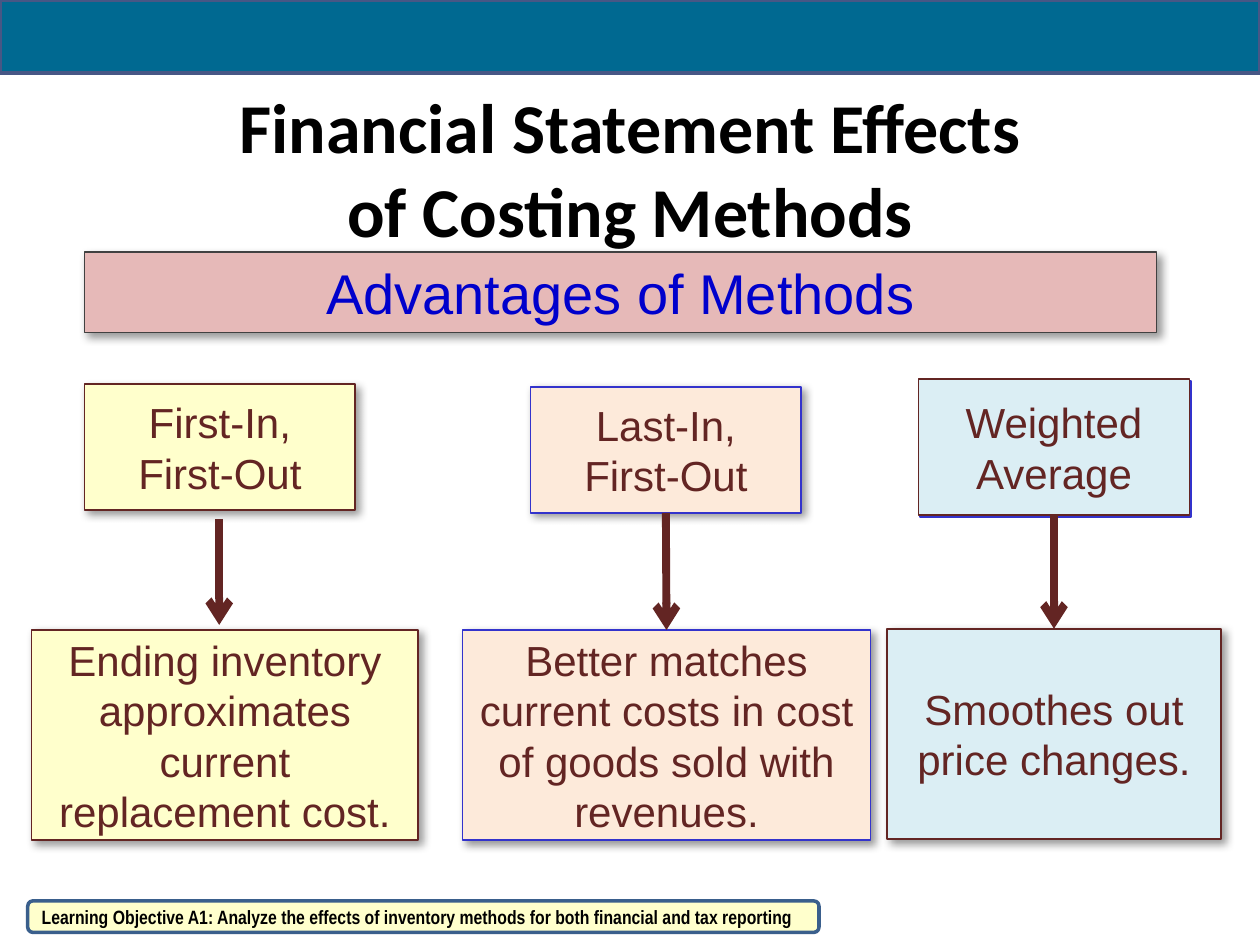
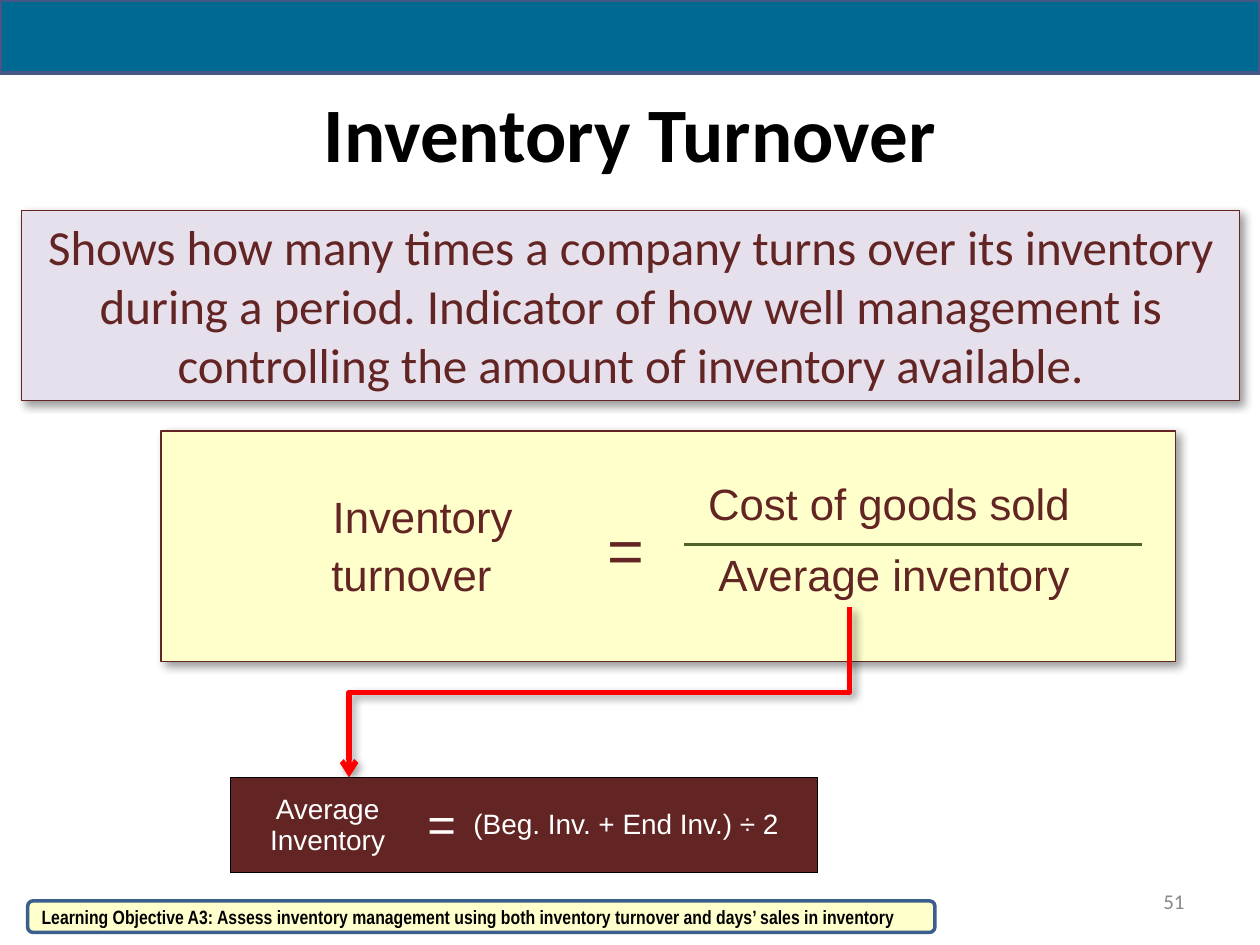
from lxml import etree
from pptx import Presentation
from pptx.dml.color import RGBColor
from pptx.enum.shapes import MSO_CONNECTOR, MSO_SHAPE
from pptx.enum.text import MSO_ANCHOR, PP_ALIGN
from pptx.oxml import parse_xml
from pptx.oxml.ns import nsdecls, qn
from pptx.util import Pt

PX = 9144
RECTANGLE, ROUNDED = MSO_SHAPE.RECTANGLE, MSO_SHAPE.ROUNDED_RECTANGLE
STRAIGHT, ELBOW = MSO_CONNECTOR.STRAIGHT, MSO_CONNECTOR.ELBOW
TOP, MIDDLE = MSO_ANCHOR.TOP, MSO_ANCHOR.MIDDLE
LEFT, CENTER, RIGHT = PP_ALIGN.LEFT, PP_ALIGN.CENTER, PP_ALIGN.RIGHT
BOTTOM_SITE, TOP_SITE = 2, 0

BLACK = RGBColor(0x00, 0x00, 0x00)
WHITE = RGBColor(0xFF, 0xFF, 0xFF)
GRAY = RGBColor(0x89, 0x89, 0x89)
CHARCOAL = RGBColor(0x41, 0x41, 0x41)
MAROON = RGBColor(0x63, 0x25, 0x23)
ROSE = RGBColor(0xE6, 0xB9, 0xB8)
YELLOW = RGBColor(0xFF, 0xFF, 0xCC)
PEACH = RGBColor(0xFD, 0xEA, 0xDA)
ICE = RGBColor(0xDB, 0xEE, 0xF4)
LAVENDER = RGBColor(0xE6, 0xE0, 0xEC)
INDIGO = RGBColor(0x33, 0x33, 0xCC)
BLUE = RGBColor(0x00, 0x00, 0xCC)
TEAL = RGBColor(0x00, 0x69, 0x91)
BAND_EDGE = RGBColor(0x47, 0x57, 0x85)
FOOTER_EDGE = RGBColor(0x3A, 0x5F, 0x8C)
GREEN = RGBColor(0x4F, 0x62, 0x28)
RED = RGBColor(0xFF, 0x00, 0x00)

TITLE_BIG = {"name": "Calibri", "size": Pt(44), "bold": True}
TITLE_SMALL = {"name": "Calibri", "size": Pt(40), "bold": True}
HEADING = {"name": "Arial", "size": Pt(32)}
METHOD = {"name": "Arial", "size": Pt(24)}
FORMULA = {"name": "Arial", "size": Pt(25)}
EQUALS = {"name": "Arial", "size": Pt(36)}
SUMMARY = {"name": "Calibri", "size": Pt(28)}
CELL = {"name": "Arial", "size": Pt(16)}
CELL_EQUALS = {"name": "Arial", "size": Pt(28)}
FOOTER = {"name": "Arial Narrow", "size": Pt(11), "bold": True}
NUMBER = {"name": "Calibri", "size": Pt(12)}

SHADOW = (
    f'<a:outerShdw {nsdecls("a")} blurRad="%d" dist="%d" dir="2700000" algn="tl" rotWithShape="0">'
    '<a:srgbClr val="%s"><a:alpha val="%d"/></a:srgbClr></a:outerShdw>'
)
SOFT = (63500, 38100, BLACK, 40000)
HARD = (0, 17780, INDIGO, 100000)


def write_text(frame, text, style, color, align):
    frame.word_wrap = True
    paragraph = frame.paragraphs[0]
    paragraph.text = text
    paragraph.alignment = align
    for run in paragraph.runs:
        for attribute, value in style.items():
            setattr(run.font, attribute, value)
        run.font.color.rgb = color


def add_box(slide, bounds, fill, edge=None, width=1, shadow=None, kind=RECTANGLE):
    shape = slide.shapes.add_shape(kind, *(value * PX for value in bounds))
    shape.fill.solid()
    shape.fill.fore_color.rgb = fill
    if edge is None:
        shape.line.fill.background()
    else:
        shape.line.color.rgb = edge
        shape.line.width = Pt(width)
    shape.shadow.inherit = False
    if shadow:
        effects = shape._element.spPr.find(qn("a:effectLst"))
        effects.append(parse_xml(SHADOW % shadow))
    return shape


presentation = Presentation()
presentation.slide_width = 1000 * PX
presentation.slide_height = 750 * PX

pages = [
    ("Financial Statement Effects\vof Costing Methods", TITLE_SMALL, (50, 83, 900, 100),
     "Learning Objective A1: Analyze the effects of inventory methods for both financial and tax reporting", 628),
    ("Inventory Turnover", TITLE_BIG, (50, 42, 900, 125),
     "Learning Objective A3: Assess inventory management using both inventory turnover and days’ sales in inventory", 720),
]
slides = []
for title_text, title_style, bounds, objective, footer_width in pages:
    slide = presentation.slides.add_slide(presentation.slide_layouts[5])
    title = slide.shapes.title
    for attribute, value in zip(("left", "top", "width", "height"), bounds):
        setattr(title, attribute, value * PX)
    title.text_frame.vertical_anchor = MIDDLE
    write_text(title.text_frame, title_text, title_style, BLACK, CENTER)
    add_box(slide, (0, 0, 1000, 58), TEAL, BAND_EDGE, 2.25)
    footer = add_box(slide, (22, 715, footer_width, 25), YELLOW, FOOTER_EDGE, 2, kind=ROUNDED)
    write_text(footer.text_frame, objective, FOOTER, BLACK, LEFT)
    slides.append(slide)
methods_slide, turnover_slide = slides

heading = add_box(methods_slide, (67, 200, 851, 64), ROSE, CHARCOAL, shadow=SOFT)
heading.text_frame.vertical_anchor = TOP
write_text(heading.text_frame, "Advantages of Methods", HEADING, BLUE, CENTER)

methods = [
    ("First-In, First-Out", (67, 305, 215, 100), SOFT,
     "Ending inventory approximates current replacement cost.", (25, 500, 307, 167),
     YELLOW, MAROON, (174, 412, 174, 496), False),
    ("Last-In, First-Out", (421, 307, 215, 100), SOFT,
     "Better matches current costs in cost of goods sold with revenues.", (367, 500, 324, 167),
     PEACH, INDIGO, (528, 405, 528, 500), True),
    ("Weighted Average", (729, 301, 215, 108), HARD,
     "Smoothes out price changes.", (704, 499, 265, 167),
     ICE, MAROON, (836, 410, 836, 501), True),
]
arrows = []
for name, name_bounds, name_shadow, benefit, benefit_bounds, fill, edge, ends, joined in methods:
    name_box = add_box(methods_slide, name_bounds, fill, edge, shadow=name_shadow)
    benefit_box = add_box(methods_slide, benefit_bounds, fill, edge, shadow=SOFT)
    for box, text in ((name_box, name), (benefit_box, benefit)):
        box.text_frame.vertical_anchor = MIDDLE
        write_text(box.text_frame, text, METHOD, MAROON, CENTER)
    arrow = methods_slide.shapes.add_connector(STRAIGHT, *(value * PX for value in ends))
    if joined:
        arrow.begin_connect(name_box, BOTTOM_SITE)
        arrow.end_connect(benefit_box, TOP_SITE)
    arrows.append((arrow, MAROON, 4.5, True, None))

add_box(turnover_slide, (128, 342, 805, 183), YELLOW, MAROON, shadow=SOFT)
terms = [
    ("Inventory", (264, 389, 168, 42), FORMULA, LEFT),
    ("turnover", (263, 435, 140, 42), FORMULA, LEFT),
    ("=", (482, 405, 33, 60), EQUALS, LEFT),
    ("Cost of goods sold", (562, 378, 324, 42), FORMULA, LEFT),
    ("Average inventory", (533, 435, 353, 42), FORMULA, CENTER),
]
for text, bounds, style, align in terms:
    term = add_box(turnover_slide, bounds, YELLOW)
    frame = term.text_frame
    frame.vertical_anchor = TOP
    for side in ("left", "top", "right", "bottom"):
        setattr(frame, f"margin_{side}", 0)
    write_text(frame, text, style, MAROON, align)

fraction_bar = turnover_slide.shapes.add_connector(STRAIGHT, 543 * PX, 432 * PX, 906 * PX, 432 * PX)
elbow = turnover_slide.shapes.add_connector(ELBOW, 408 * PX, 351 * PX, 543 * PX, 748 * PX)
elbow._element.spPr.find(qn("a:xfrm")).set("rot", "5400000")

connectors = arrows + [(fraction_bar, GREEN, 1.5, False, None), (elbow, RED, 3, True, SOFT)]
for connector, color, width, has_arrow, shadow in connectors:
    connector.line.color.rgb = color
    connector.line.width = Pt(width)
    properties = connector._element.spPr
    if has_arrow:
        etree.SubElement(properties.find(qn("a:ln")), qn("a:tailEnd"), type="arrow")
    effects = etree.SubElement(properties, qn("a:effectLst"))
    if shadow:
        effects.append(parse_xml(SHADOW % shadow))

summary = add_box(turnover_slide, (17, 167, 967, 151), LAVENDER, MAROON, 0.75, SOFT)
summary.text_frame.vertical_anchor = TOP
write_text(
    summary.text_frame,
    "Shows how many times a company turns over its inventory during a period. "
    "Indicator of how well management is controlling the amount of inventory available.",
    SUMMARY, MAROON, CENTER,
)

columns = [
    (154, "Average Inventory", CELL, 1, ("L", "T", "B")),
    (27, "=", CELL_EQUALS, 1, ("T", "B")),
    (260, "(Beg. Inv. + End Inv.) ÷ 2", CELL, 7, ("T", "B")),
    (25, "", CELL, 1, ("R", "T", "B")),
]
table = turnover_slide.shapes.add_table(1, len(columns), 183 * PX, 617 * PX, 466 * PX, 75 * PX).table
table.first_row = False
table.horz_banding = False
table.rows[0].height = 75 * PX
for index, (width, text, style, left_margin, borders) in enumerate(columns):
    table.columns[index].width = width * PX
    cell = table.cell(0, index)
    margins = {"margin_left": left_margin, "margin_top": 1, "margin_right": 1, "margin_bottom": 0}
    for attribute, value in margins.items():
        setattr(cell, attribute, value * PX)
    cell.vertical_anchor = MIDDLE
    write_text(cell.text_frame, text, style, WHITE, CENTER)
    cell_properties = cell._tc.get_or_add_tcPr()
    for side in ("L", "R", "T", "B"):
        border = etree.SubElement(cell_properties, qn(f"a:ln{side}"), w=str(Pt(0.5)))
        if side in borders:
            border_fill = etree.SubElement(border, qn("a:solidFill"))
            etree.SubElement(border_fill, qn("a:srgbClr"), val=str(BLACK))
        else:
            etree.SubElement(border, qn("a:noFill"))
    cell.fill.solid()
    cell.fill.fore_color.rgb = MAROON

number = turnover_slide.shapes.add_textbox(717 * PX, 695 * PX, 233 * PX, 40 * PX)
number.text_frame.vertical_anchor = MIDDLE
write_text(number.text_frame, "51", NUMBER, GRAY, RIGHT)

presentation.save("out.pptx")
